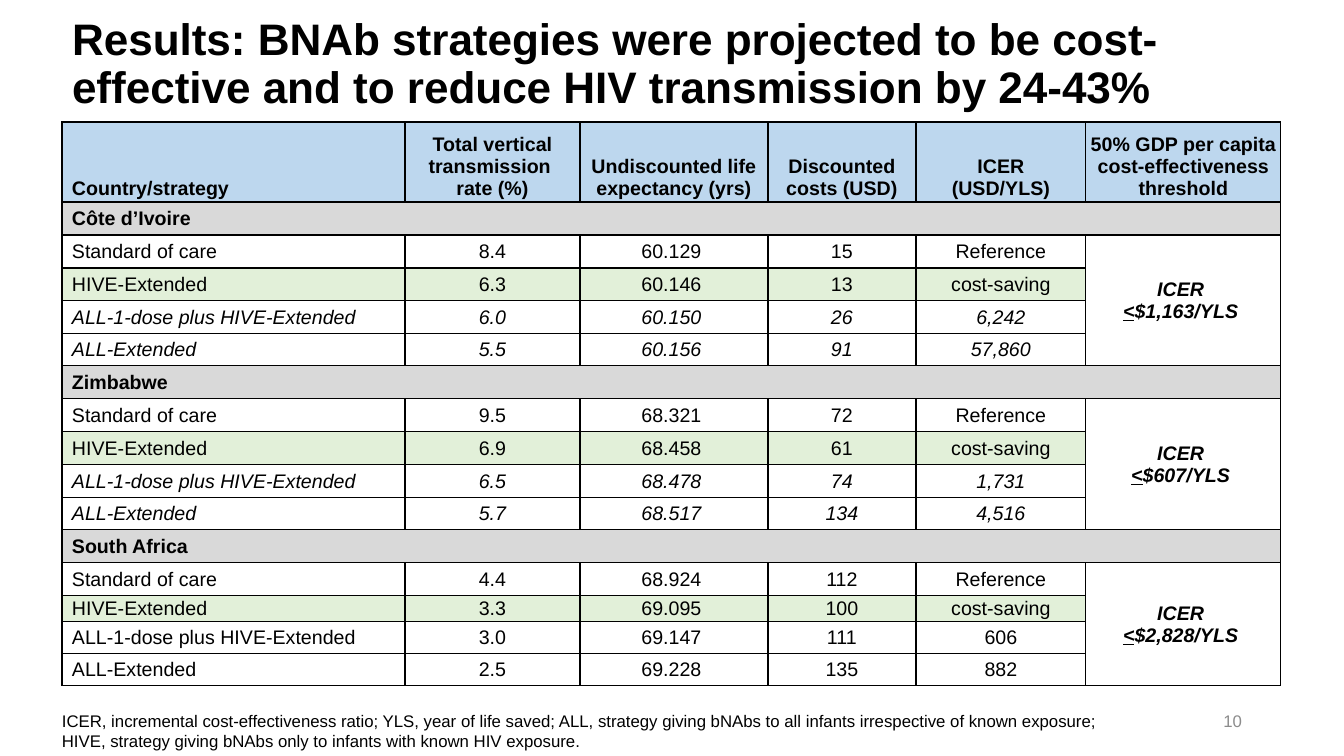
import pptx
import pptx.util
import pptx.dml.color
import pptx.enum.text
import pptx.oxml
import pptx.oxml.ns
from dataclasses import dataclass


@dataclass(frozen=True)
class Theme:
    font: str = "Arial"
    text: str = "000000"
    muted: str = "8C8C8C"
    header: str = "BDD7EE"
    country: str = "D9D9D9"
    highlight: str = "E2F0D9"
    title_size: float = 31.5
    table_size: float = 14
    note_size: float = 12


theme = Theme()
ALIGN = pptx.enum.text.PP_ALIGN
ANCHOR = pptx.enum.text.MSO_ANCHOR
PX = 914400 / 100.8


def px(length):
    return pptx.util.Emu(round(length * PX))


def add_run(paragraph, text, size, color=theme.text, bold=False, italic=False, underline=False):
    run = paragraph.add_run()
    run.text = text
    run.font.name = theme.font
    run.font.size = pptx.util.Pt(size)
    run.font.color.rgb = pptx.dml.color.RGBColor.from_string(color)
    run.font.bold = bold
    run.font.italic = italic
    run.font.underline = underline


presentation = pptx.Presentation()
presentation.slide_width = px(1344)
presentation.slide_height = px(756)
slide = presentation.slides.add_slide(presentation.slide_layouts[5])

# Title
title = slide.shapes.title
title.left, title.top, title.width, title.height = px(62), px(17), px(1190), px(97)
title.text_frame.word_wrap = True
title.text_frame.vertical_anchor = ANCHOR.MIDDLE
paragraph = title.text_frame.paragraphs[0]
paragraph.alignment = ALIGN.LEFT
paragraph.line_spacing = 0.9
add_run(paragraph, "Results: BNAb strategies were projected to be cost-effective "
        "and to reduce HIV transmission by 24-43%", theme.title_size, bold=True)

# Table content: threshold and strategy results of each country
headers = ["Country/strategy", "Total vertical transmission \nrate (%)",
           "Undiscounted life expectancy (yrs)", "Discounted costs (USD)",
           "ICER\n(USD/YLS)", "50% GDP per capita cost-effectiveness threshold"]
strategies = ["Standard of care", "HIVE-Extended", "ALL-1-dose plus HIVE-Extended", "ALL-Extended"]
countries = [
    ("Côte d’Ivoire", "$1,163/YLS ", [
        ("8.4", "60.129", "15", "Reference"), ("6.3", "60.146", "13", "cost-saving"),
        ("6.0", "60.150", "26", "6,242"), ("5.5", "60.156", "91", "57,860")]),
    ("Zimbabwe", "$607/YLS ", [
        ("9.5", "68.321", "72", "Reference"), ("6.9", "68.458", "61", "cost-saving"),
        ("6.5", "68.478", "74", "1,731"), ("5.7", "68.517", "134", "4,516")]),
    ("South Africa", "$2,828/YLS ", [
        ("4.4", "68.924", "112", "Reference"), ("3.3", "69.095", "100", "cost-saving"),
        ("3.0", "69.147", "111", "606"), ("2.5", "69.228", "135", "882")]),
]
column_widths = [343, 175, 188, 148, 170, 195]
row_heights = [80] + [33, 33, 33, 33, 32] * 2 + [33, 33, 26, 32, 32]

# Table frame
frame = slide.shapes.add_table(len(row_heights), len(column_widths), px(62), px(122),
                               px(sum(column_widths)), px(sum(row_heights)))
table = frame.table
table.first_row = False
table.horz_banding = False
for column, width in zip(table.columns, column_widths):
    column.width = px(width)
for row, height in zip(table.rows, row_heights):
    row.height = px(height)

# Cell borders, margins and fills
for row_index in range(len(row_heights)):
    for column_index in range(len(column_widths)):
        cell = table.cell(row_index, column_index)
        cell.margin_left = px(10 if column_index == 0 else 2)
        # Life expectancies sit slightly left of the column centre
        cell.margin_right = px(7 if column_index == 2 and row_index else 2)
        cell.margin_top = cell.margin_bottom = px(2)
        cell.vertical_anchor = ANCHOR.MIDDLE if row_index else ANCHOR.BOTTOM
        properties = cell._tc.get_or_add_tcPr()
        for side in ("lnL", "lnR", "lnT", "lnB"):
            properties.append(pptx.oxml.parse_xml(
                f'<a:{side} {pptx.oxml.ns.nsdecls("a")} w="12700"><a:solidFill>'
                f'<a:srgbClr val="{theme.text}"/></a:solidFill></a:{side}>'))
        if row_index == 0:
            color = theme.header
        elif row_index % 5 == 1:
            color = theme.country
        elif row_index % 5 == 3 and column_index < 5:
            color = theme.highlight
        else:
            color = None
        if color:
            cell.fill.solid()
            cell.fill.fore_color.rgb = pptx.dml.color.RGBColor.from_string(color)
        else:
            cell.fill.background()

# Header row
for column_index, header in enumerate(headers):
    text_frame = table.cell(0, column_index).text_frame
    for line_index, line in enumerate(header.split("\n")):
        paragraph = text_frame.add_paragraph() if line_index else text_frame.paragraphs[0]
        paragraph.alignment = ALIGN.CENTER if column_index else ALIGN.LEFT
        add_run(paragraph, line, theme.table_size, bold=True)

# Country blocks
for country_index, (country, threshold, results) in enumerate(countries):
    first_row = 1 + 5 * country_index
    country_cell = table.cell(first_row, 0)
    country_cell.merge(table.cell(first_row, 5))
    add_run(country_cell.text_frame.paragraphs[0], country, theme.table_size, bold=True)

    for strategy_index, (strategy, values) in enumerate(zip(strategies, results)):
        italic = strategy_index >= 2 and country != "South Africa"
        for column_index, value in enumerate((strategy, *values)):
            cell = table.cell(first_row + 1 + strategy_index, column_index)
            paragraph = cell.text_frame.paragraphs[0]
            paragraph.alignment = ALIGN.CENTER if column_index else ALIGN.LEFT
            add_run(paragraph, value, theme.table_size, italic=italic)

    threshold_cell = table.cell(first_row + 1, 5)
    threshold_cell.merge(table.cell(first_row + 4, 5))
    label = threshold_cell.text_frame.paragraphs[0]
    limit = threshold_cell.text_frame.add_paragraph()
    label.alignment = limit.alignment = ALIGN.CENTER
    add_run(label, "ICER ", theme.table_size, bold=True, italic=True)
    add_run(limit, "<", theme.table_size, bold=True, italic=True, underline=True)
    add_run(limit, threshold, theme.table_size, bold=True, italic=True)

# Slide number
number_box = slide.shapes.add_textbox(px(950), px(701), px(302), px(40))
number_box.text_frame.word_wrap = True
number_box.text_frame.vertical_anchor = ANCHOR.MIDDLE
paragraph = number_box.text_frame.paragraphs[0]
paragraph.alignment = ALIGN.RIGHT
add_run(paragraph, "10", theme.note_size, theme.muted)

# Abbreviations
notes = [
    "ICER, incremental cost-effectiveness ratio; YLS, year of life saved; "
    "ALL, strategy giving bNAbs to all infants irrespective of known exposure;",
    "HIVE, strategy giving bNAbs only to infants with known HIV exposure.",
]
notes_box = slide.shapes.add_textbox(px(52), px(706), px(1070), px(50))
notes_box.text_frame.word_wrap = True
for note_index, note in enumerate(notes):
    text_frame = notes_box.text_frame
    paragraph = text_frame.add_paragraph() if note_index else text_frame.paragraphs[0]
    add_run(paragraph, note, theme.note_size)

presentation.save("out.pptx")
